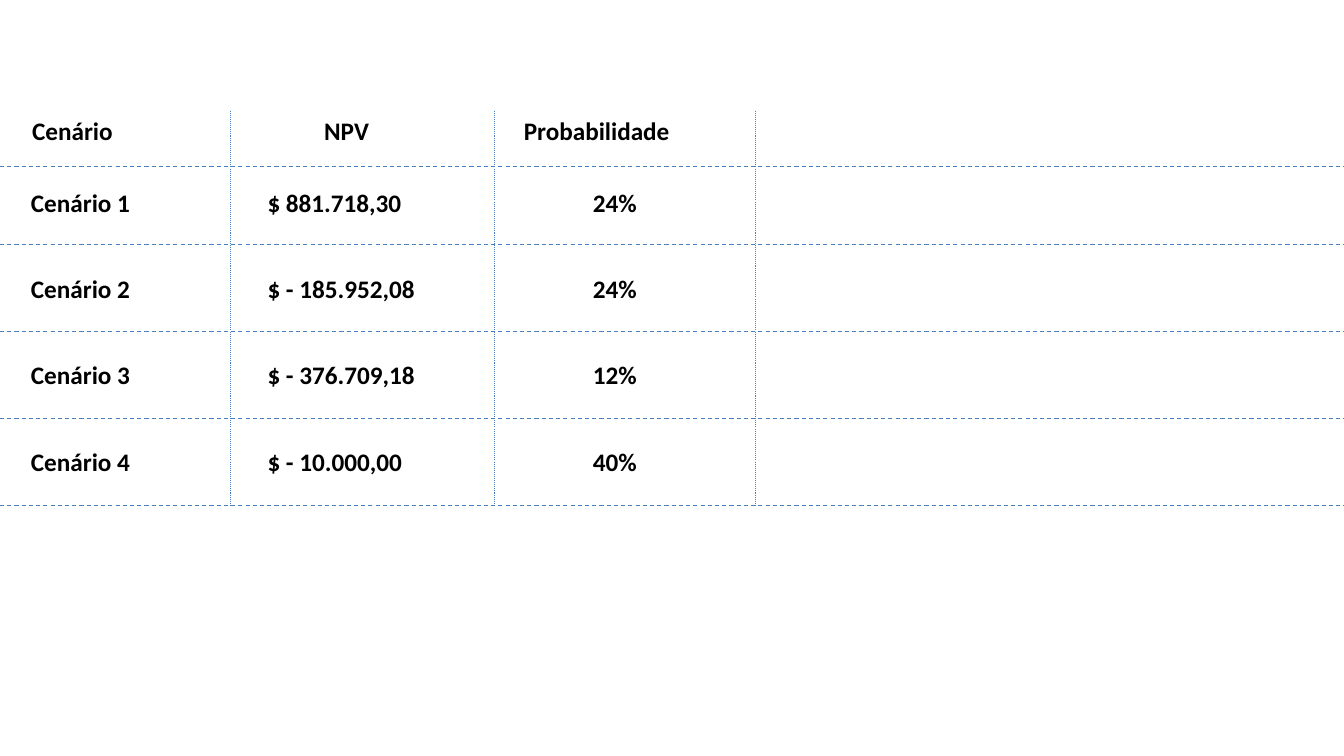
from pptx import Presentation
from pptx.dml.color import RGBColor
from pptx.enum.dml import MSO_LINE
from pptx.enum.shapes import MSO_CONNECTOR
from pptx.enum.text import MSO_AUTO_SIZE, MSO_ANCHOR
from pptx.util import Cm, Pt
from lxml import etree

COLORS = {"rule": "4B7EBC", "text": "000000"}
A = "http://schemas.openxmlformats.org/drawingml/2006/main"

prs = Presentation()
prs.slide_width, prs.slide_height = Cm(33.87), Cm(19.05)
s = prs.slides.add_slide(prs.slide_layouts[6])


def add_rule(x1, y1, x2, y2, dash):
    line = s.shapes.add_connector(MSO_CONNECTOR.STRAIGHT, Cm(x1), Cm(y1), Cm(x2), Cm(y2))
    line.line.color.rgb = RGBColor.from_string(COLORS["rule"])
    line.line.width = Pt(0.75)
    line.line.dash_style = dash
    etree.SubElement(line._element.spPr, f"{{{A}}}effectLst")


def add_label(text, x, y, w):
    tf = s.shapes.add_textbox(Cm(x), Cm(y), Cm(w), Cm(1.03)).text_frame
    tf.word_wrap = False
    tf.auto_size = MSO_AUTO_SIZE.SHAPE_TO_FIT_TEXT
    tf.vertical_anchor = MSO_ANCHOR.TOP
    r = tf.paragraphs[0].add_run()
    r.text = text
    r.font.name = "Calibri"
    r.font.size = Pt(18)
    r.font.bold = True
    r.font.color.rgb = RGBColor.from_string(COLORS["text"])


top, bottom = 2.79, 12.73
row_rules = [4.19, 6.17, 8.36, 10.54, bottom]
row_tops = [4.6, 6.76, 8.94, 11.13]

for y in row_rules:
    add_rule(0, y, 33.87, y, MSO_LINE.DASH)
for x in (5.82, 12.45, 19.05):
    add_rule(x, top, x, bottom, MSO_LINE.ROUND_DOT)

for header, x, w in [("Cenário", 0.56, 2.57), ("NPV", 7.92, 1.65), ("Probabilidade", 12.95, 4.24)]:
    add_label(header, x, top, w)

scenarios = [
    ("881.718,30", 4.06, "24%"),
    ("- 185.952,08", 4.39, "24%"),
    ("- 376.709,18", 4.39, "12%"),
    ("- 10.000,00", 4.09, "40%"),
]
for i, (y, (npv, npv_width, probability)) in enumerate(zip(row_tops, scenarios), 1):
    add_label(f"Cenário {i}", 0.53, y, 3.05)
    add_label(f" $ {npv}", 6.35, y, npv_width)
    add_label(f" {probability}", 14.55, y, 1.78)

prs.save("out.pptx")
